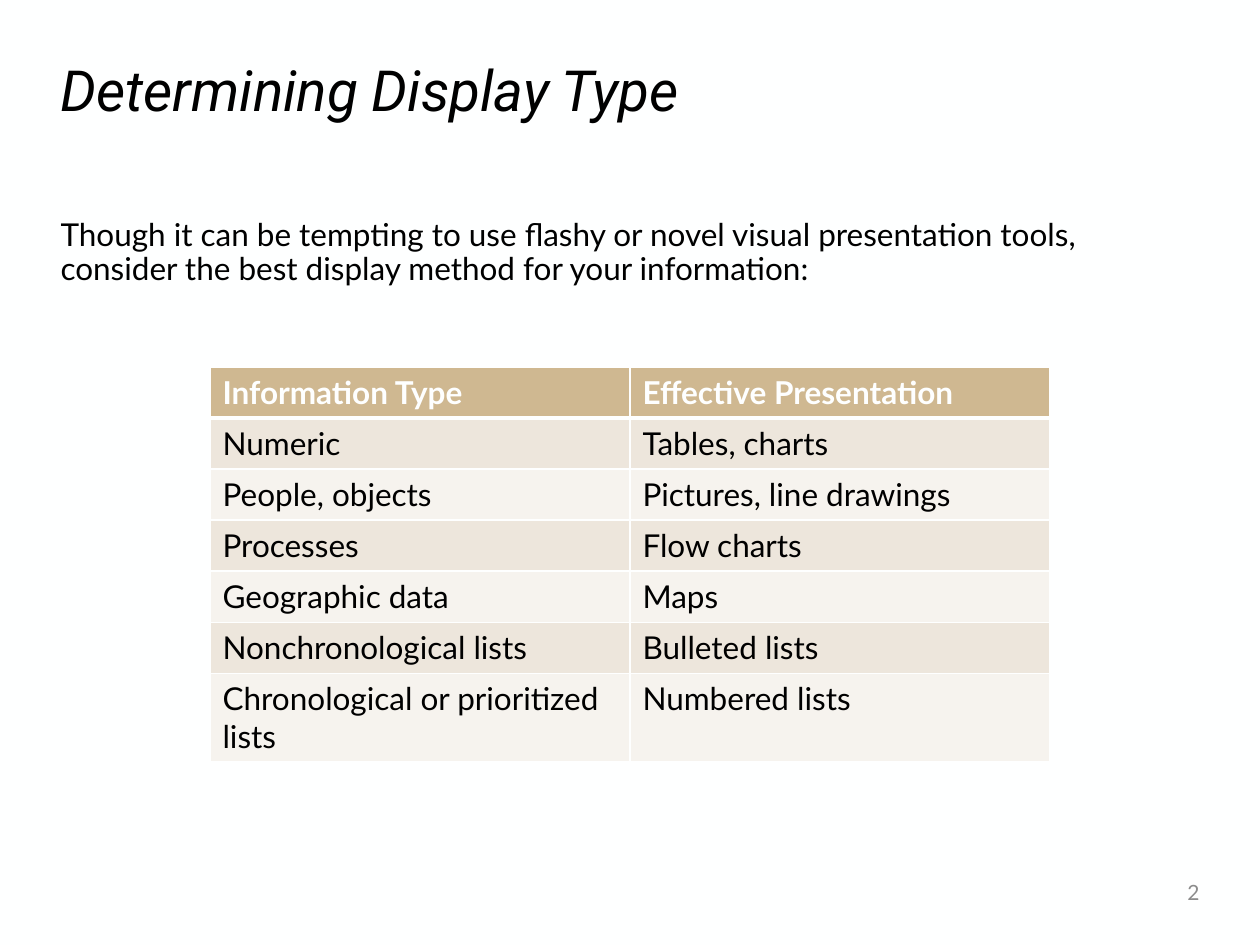
import pptx
import pptx.util
import pptx.dml.color
import pptx.enum.text
import pptx.oxml
import pptx.oxml.ns
from dataclasses import dataclass

Pt = pptx.util.Pt
ALIGN = pptx.enum.text.PP_ALIGN
ANCHOR = pptx.enum.text.MSO_ANCHOR


@dataclass(frozen=True)
class Theme:
    paper: str = "FEFFFF"
    ink: str = "000000"
    muted: str = "8C8C8C"
    header: str = "CFB891"
    bands: tuple = ("EDE6DC", "F6F3EE")
    heading_font: str = "Roboto"
    text_font: str = "Lato"
    heading_size: float = 32.4
    text_size: float = 18
    number_size: float = 12


THEME = Theme()

HEADING = "Determining Display Type"
INTRO = (
    "Though it can be tempting to use flashy or novel visual presentation tools, "
    "consider the best display method for your information:"
)
PAGE_NUMBER = "2"
DISPLAY_TYPES = [
    ("Information Type", "Effective Presentation"),
    ("Numeric", "Tables, charts"),
    ("People, objects", "Pictures, line drawings"),
    ("Processes", "Flow charts"),
    ("Geographic data", "Maps"),
    ("Nonchronological lists", "Bulleted lists"),
    ("Chronological or prioritized lists", "Numbered lists"),
]

SLIDE_WIDTH, SLIDE_HEIGHT = 720, 540
MARGIN = 27.4
CONTENT_WIDTH = SLIDE_WIDTH - 2 * MARGIN
NUMBER_WIDTH = 86.4
TABLE_TOP, TABLE_WIDTH, ROW_HEIGHT = 209.6, 480, 29.2


def color(value):
    return pptx.dml.color.RGBColor.from_string(value)


def write(frame, text, font=THEME.text_font, size=THEME.text_size, ink=THEME.ink,
          bold=False, italic=False, align=ALIGN.LEFT, spacing=None):
    frame.word_wrap = True
    paragraph = frame.paragraphs[0]
    properties = paragraph._p.get_or_add_pPr()
    properties.set("marL", "0")
    properties.set("indent", "0")
    properties.append(pptx.oxml.parse_xml(
        f"<a:buNone {pptx.oxml.ns.nsdecls('a')}/>"))
    paragraph.alignment = align
    paragraph.line_spacing = spacing
    paragraph.space_before = Pt(0)
    run = paragraph.add_run()
    run.text = text
    run.font.name = font
    run.font.size = Pt(size)
    run.font.color.rgb = color(ink)
    run.font.bold = bold
    run.font.italic = italic


def place(shape, left, top, width, height, anchor):
    shape.left, shape.top = Pt(left), Pt(top)
    shape.width, shape.height = Pt(width), Pt(height)
    shape.text_frame.auto_size = pptx.enum.text.MSO_AUTO_SIZE.NONE
    shape.text_frame.vertical_anchor = anchor


def set_borders(cell, **widths):
    properties = cell._tc.get_or_add_tcPr()
    for position, (side, width) in enumerate(widths.items()):
        properties.insert(position, pptx.oxml.parse_xml(
            f'<a:{side} {pptx.oxml.ns.nsdecls("a")} w="{Pt(width)}">'
            f'<a:solidFill><a:srgbClr val="{THEME.paper}"/></a:solidFill></a:{side}>'))


def add_display_table(slide):
    table = slide.shapes.add_table(
        len(DISPLAY_TYPES), len(DISPLAY_TYPES[0]),
        Pt((SLIDE_WIDTH - TABLE_WIDTH) / 2), Pt(TABLE_TOP),
        Pt(TABLE_WIDTH), Pt(ROW_HEIGHT * len(DISPLAY_TYPES))).table
    for row, entries in enumerate(DISPLAY_TYPES):
        table.rows[row].height = Pt(ROW_HEIGHT)
        is_header = row == 0
        for column, entry in enumerate(entries):
            cell = table.cell(row, column)
            cell.fill.solid()
            cell.fill.fore_color.rgb = color(
                THEME.header if is_header else THEME.bands[(row - 1) % 2])
            set_borders(cell, lnL=1, lnR=1, lnT=3 if row == 1 else 1,
                        lnB=3 if is_header else 1)
            write(cell.text_frame, entry, bold=is_header,
                  ink=THEME.paper if is_header else THEME.ink)


def main():
    deck = pptx.Presentation()
    deck.slide_width, deck.slide_height = Pt(SLIDE_WIDTH), Pt(SLIDE_HEIGHT)
    slide = deck.slides.add_slide(deck.slide_layouts[1])
    slide.background.fill.solid()
    slide.background.fill.fore_color.rgb = color(THEME.paper)

    intro = slide.placeholders[1]
    place(intro, MARGIN, 121.7, CONTENT_WIDTH, 350.6, ANCHOR.TOP)
    write(intro.text_frame, INTRO, spacing=0.9)

    heading = slide.shapes.title
    place(heading, MARGIN, 30.2, CONTENT_WIDTH, 46.1, ANCHOR.MIDDLE)
    write(heading.text_frame, HEADING, font=THEME.heading_font,
          size=THEME.heading_size, italic=True, spacing=0.9)

    number = slide.shapes.add_textbox(0, 0, 0, 0)
    place(number, SLIDE_WIDTH - MARGIN - NUMBER_WIDTH, 495.4,
          NUMBER_WIDTH, 28.8, ANCHOR.MIDDLE)
    write(number.text_frame, PAGE_NUMBER, size=THEME.number_size,
          ink=THEME.muted, align=ALIGN.RIGHT)

    add_display_table(slide)
    deck.save("out.pptx")


if __name__ == "__main__":
    main()
